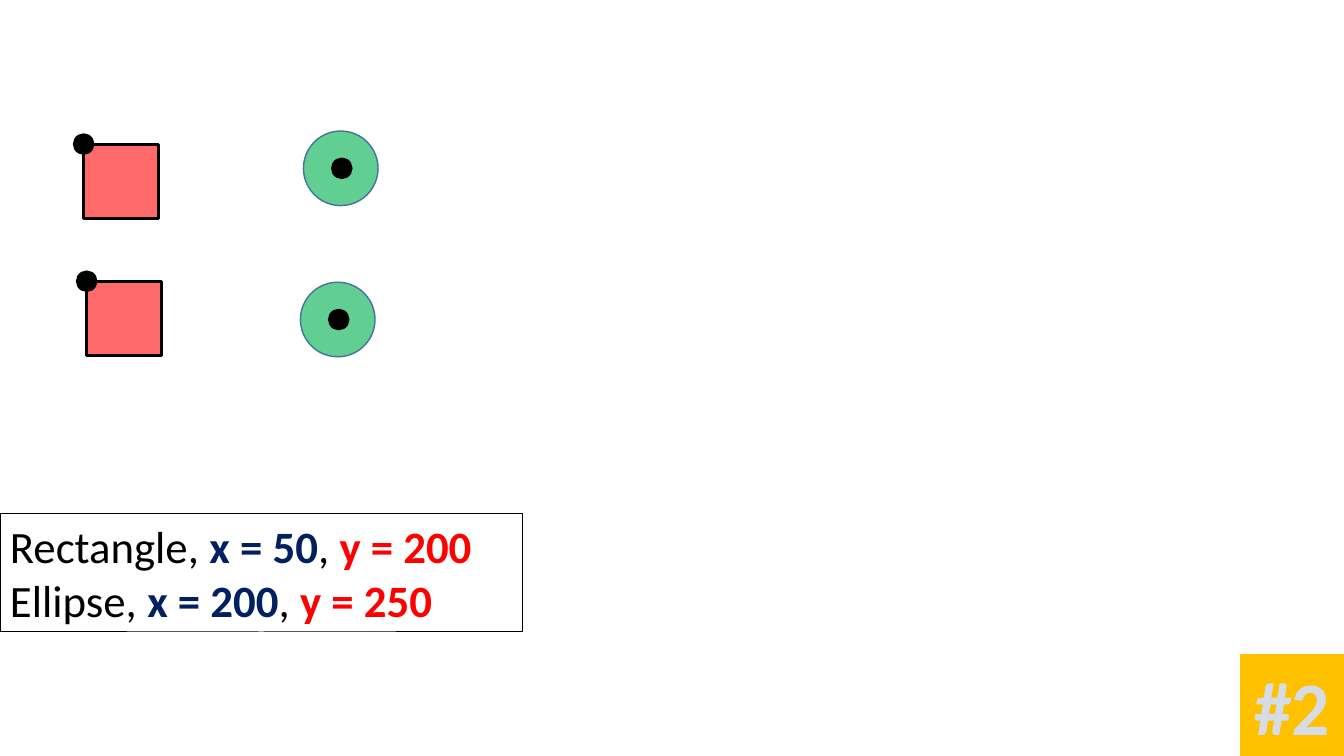
from lxml import etree
from pptx import Presentation
from pptx.dml.color import RGBColor
from pptx.enum.shapes import MSO_SHAPE as Shape
from pptx.enum.text import PP_ALIGN as Align
from pptx.oxml.ns import qn
from pptx.util import Inches, Pt

SIZE, DOT_SIZE = 0.74, 0.2
BLACK, NAVY, RED = "000000", "002060", "FF0000"

# kind: preset, fill, opacity in percent, line colour, line width, dot offset
KINDS = {
    "rectangle": (Shape.RECTANGLE, RED, 59, BLACK, 2.25, (-0.1, -0.1)),
    "ellipse": (Shape.OVAL, "00B050", 62, "43739E", 1, (0.28, 0.27)),
}
FIGURES = [
    ("rectangle", 0.86, 2.79),
    ("ellipse", 2.98, 2.8),
    ("rectangle", 0.83, 1.43),
    ("ellipse", 3.01, 1.3),
]
COORDINATES = [("Rectangle, ", "x = 50", "y = 200"),
               ("Ellipse, ", "x = 200", "y = 250")]


def color(value):
    return RGBColor.from_string(value)


def draw(parent, preset, at, fill=None, opacity=100, line=None, width=1):
    """Add a preset shape with an optional fill, opacity and outline."""
    shape = parent.shapes.add_shape(preset, *map(Inches, at))
    shape.shadow.inherit = False
    if fill:
        shape.fill.solid()
        shape.fill.fore_color.rgb = color(fill)
        if opacity < 100:
            tone = shape.fill._xPr.find(qn("a:solidFill"))[0]
            etree.SubElement(tone, qn("a:alpha"), val=str(opacity * 1000))
    else:
        shape.fill.background()
    if line:
        shape.line.color.rgb = color(line)
        shape.line.width = Pt(width)
    else:
        shape.line.fill.background()
    return shape


def write(para, text, size, tone, bold=False):
    span = para.add_run()
    span.text = text
    for name, value in {"name": "Calibri", "size": Pt(size), "bold": bold}.items():
        setattr(span.font, name, value)
    span.font.color.rgb = color(tone)


deck = Presentation()
deck.slide_width, deck.slide_height = Inches(13.33), Inches(7.5)
page = deck.slides.add_slide(deck.slide_layouts[6])

box = draw(page, Shape.RECTANGLE, (0, 5.09, 5.18, 1.18), line=BLACK, width=0.75)
frame = box.text_frame
frame.word_wrap = True
for index, (label, x_value, y_value) in enumerate(COORDINATES):
    para = frame.add_paragraph() if index else frame.paragraphs[0]
    para.alignment = Align.LEFT
    write(para, label, 32, BLACK)
    write(para, x_value, 32, NAVY, True)
    write(para, ", ", 32, BLACK)
    write(para, y_value, 32, RED, True)

for kind, left, top in FIGURES:
    preset, fill, opacity, line, width, (dx, dy) = KINDS[kind]
    group = page.shapes.add_group_shape()
    draw(group, preset, (left, top, SIZE, SIZE), fill, opacity, line, width)
    draw(group, Shape.OVAL, (left + dx, top + dy, DOT_SIZE, DOT_SIZE), BLACK, line=BLACK)

badge = draw(page, Shape.RECTANGLE, (12.3, 6.49, 1.03, 1.01), "FFC000")
badge.text_frame.word_wrap = False
badge_para = badge.text_frame.paragraphs[0]
badge_para.alignment = Align.CENTER
write(badge_para, "#2", 54, "D6DCE5", True)

deck.save("out.pptx")
